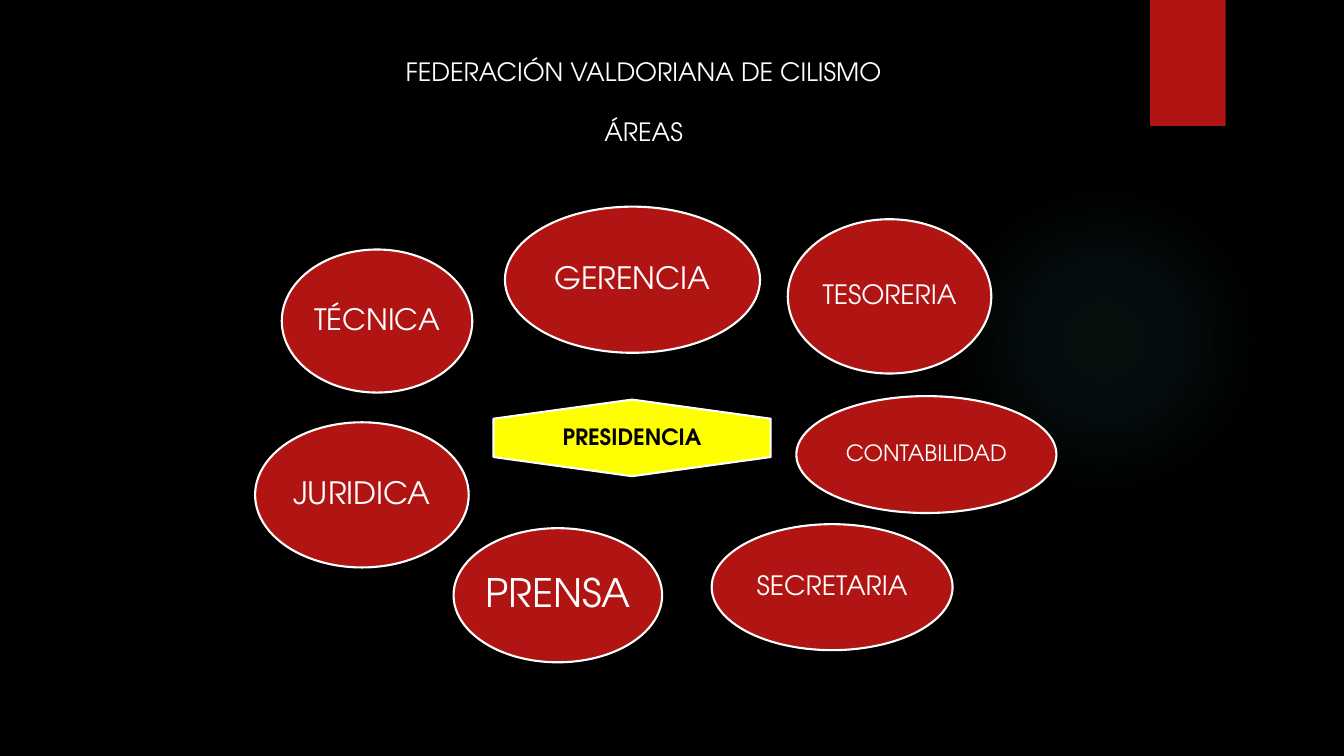
from dataclasses import dataclass

from pptx import Presentation
from pptx.dml.color import RGBColor
from pptx.enum.shapes import MSO_SHAPE
from pptx.enum.text import MSO_ANCHOR, PP_ALIGN
from pptx.oxml import parse_xml
from pptx.oxml.ns import nsdecls
from pptx.shapes.autoshape import Shape
from pptx.slide import Slide
from pptx.util import Pt

ELLIPSE = MSO_SHAPE.OVAL
HEXAGON = MSO_SHAPE.HEXAGON
RECTANGLE = MSO_SHAPE.RECTANGLE
CENTER = PP_ALIGN.CENTER
TOP = MSO_ANCHOR.TOP
MIDDLE = MSO_ANCHOR.MIDDLE


@dataclass(frozen=True)
class Theme:
    font: str = "TeX Gyre Adventor"
    background: RGBColor = RGBColor(0x00, 0x00, 0x00)
    red: RGBColor = RGBColor(0xB0, 0x15, 0x13)
    yellow: RGBColor = RGBColor(0xFF, 0xFF, 0x00)
    white: RGBColor = RGBColor(0xFF, 0xFF, 0xFF)
    black: RGBColor = RGBColor(0x00, 0x00, 0x00)
    glow: RGBColor = RGBColor(0x50, 0xB9, 0xC1)
    title_size: float = 18
    presidency_size: float = 16
    small: float = 16
    medium: float = 19
    large: float = 21
    larger: float = 22
    largest: float = 28
    outline: float = 1.5


@dataclass(frozen=True)
class Box:
    center_x: float
    center_y: float
    width: float
    height: float

    def lengths(self) -> tuple[Pt, Pt, Pt, Pt]:
        return (
            Pt(self.center_x - self.width / 2),
            Pt(self.center_y - self.height / 2),
            Pt(self.width),
            Pt(self.height),
        )


@dataclass(frozen=True)
class Area:
    name: str
    size: float
    box: Box


THEME = Theme()
TITLE = ["FEDERACIÓN VALDORIANA DE CILISMO", "ÁREAS"]
TITLE_BOX = Box(459.7, 95, 471.6, 116.6)
GLOW_BOX = Box(788.4, 242.6, 221.8, 221.8)
GLOW_STOPS = [(0, 7), (36, 6), (69, 0), (100, 0)]
RIBBON_BOX = Box(848.5, 45, 54, 90)
PRESIDENCY_BOX = Box(451.5, 312.8, 54.7, 198)
PRESIDENCY_LABEL_BOX = Box(451.5, 312.8, 132, 36.7)
AREAS = [
    Area("CONTABILIDAD", THEME.small, Box(661.7, 324.7, 185.8, 83.5)),
    Area("JURIDICA", THEME.larger, Box(258.5, 353.5, 152.6, 103.7)),
    Area("TESORERIA", THEME.medium, Box(635.4, 211.7, 145.4, 110.2)),
    Area("GERENCIA", THEME.larger, Box(451.8, 199.8, 182.2, 104.4)),
    Area("TÉCNICA", THEME.large, Box(269.3, 229.3, 136.1, 102.2)),
    Area("SECRETARIA", THEME.medium, Box(594.4, 419.4, 172.1, 90)),
    Area("PRENSA", THEME.largest, Box(398.5, 425.2, 149, 95.8)),
]


def add_filled_shape(
    slide: Slide, kind: MSO_SHAPE, box: Box, color: RGBColor, outlined: bool = True
) -> Shape:
    shape = slide.shapes.add_shape(kind, *box.lengths())
    shape.shadow.inherit = False
    shape.fill.solid()
    shape.fill.fore_color.rgb = color
    if outlined:
        shape.line.color.rgb = THEME.white
        shape.line.width = Pt(THEME.outline)
    else:
        shape.line.fill.background()
    return shape


def write_text(
    shape: Shape,
    lines: list[str],
    *,
    size: float,
    color: RGBColor = THEME.white,
    bold: bool = False,
    anchor: MSO_ANCHOR = MIDDLE,
    line_spacing: float = 0.9,
    gap: float = 0,
    margin: float = 0,
    wrap: bool = False,
) -> None:
    frame = shape.text_frame
    frame.word_wrap = wrap
    frame.vertical_anchor = anchor
    frame.margin_left = frame.margin_right = Pt(margin)
    frame.margin_top = frame.margin_bottom = Pt(margin / 2)
    for index, line in enumerate(lines):
        paragraph = frame.add_paragraph() if index else frame.paragraphs[0]
        paragraph.alignment = CENTER
        paragraph.line_spacing = line_spacing
        paragraph.space_before = Pt(gap if index else 0)
        run = paragraph.add_run()
        run.text = line
        run.font.name = THEME.font
        run.font.size = Pt(size)
        run.font.bold = bold
        run.font.color.rgb = color


def add_glow(slide: Slide) -> None:
    shape = add_filled_shape(slide, ELLIPSE, GLOW_BOX, THEME.glow, outlined=False)
    stops = "".join(
        f'<a:gs pos="{position * 1000}"><a:srgbClr val="{THEME.glow}">'
        f'<a:alpha val="{opacity * 1000}"/></a:srgbClr></a:gs>'
        for position, opacity in GLOW_STOPS
    )
    gradient = parse_xml(
        f'<a:gradFill {nsdecls("a")}><a:gsLst>{stops}</a:gsLst><a:path path="circle">'
        '<a:fillToRect l="50000" t="50000" r="50000" b="50000"/></a:path></a:gradFill>'
    )
    properties = shape.element.spPr
    properties.replace(properties.find("{*}solidFill"), gradient)


def add_title(slide: Slide) -> None:
    title = slide.shapes.add_textbox(*TITLE_BOX.lengths())
    write_text(
        title, TITLE, size=THEME.title_size, anchor=TOP,
        line_spacing=1, gap=21.5, margin=7.2, wrap=True,
    )


def add_area(slide: Slide, area: Area) -> None:
    shape = add_filled_shape(slide, ELLIPSE, area.box, THEME.red)
    write_text(shape, [area.name], size=area.size)


def add_presidency(slide: Slide) -> None:
    hexagon = add_filled_shape(slide, HEXAGON, PRESIDENCY_BOX, THEME.yellow)
    hexagon.rotation = 90
    label = slide.shapes.add_textbox(*PRESIDENCY_LABEL_BOX.lengths())
    write_text(
        label, ["PRESIDENCIA"], size=THEME.presidency_size,
        color=THEME.black, bold=True, wrap=True,
    )


def main() -> None:
    presentation = Presentation()
    presentation.slide_width = Pt(960)
    presentation.slide_height = Pt(540)
    slide = presentation.slides.add_slide(presentation.slide_layouts[6])
    slide.background.fill.solid()
    slide.background.fill.fore_color.rgb = THEME.background
    add_glow(slide)
    add_filled_shape(slide, RECTANGLE, RIBBON_BOX, THEME.red, outlined=False)
    add_title(slide)
    for area in AREAS:
        add_area(slide, area)
    add_presidency(slide)
    presentation.save("out.pptx")


if __name__ == "__main__":
    main()
